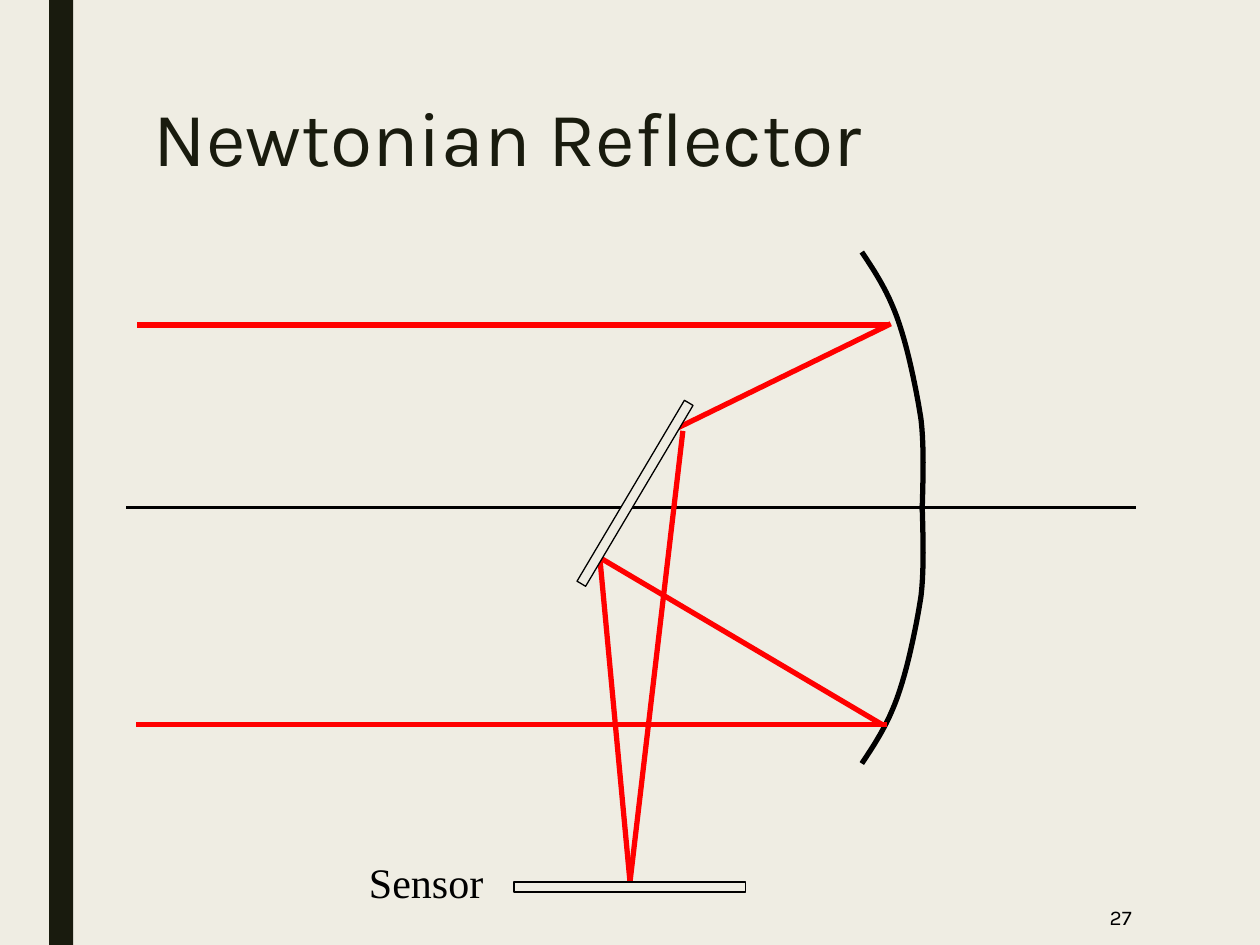
"""Build a slide with the light path of a Newtonian reflector."""
import dataclasses
import typing

import lxml.etree
import pptx
import pptx.dml.color
import pptx.enum.shapes
import pptx.enum.text
import pptx.oxml.ns
import pptx.util

Inches = pptx.util.Inches
Align = pptx.enum.text.PP_ALIGN
Anchor = pptx.enum.text.MSO_ANCHOR
Point = typing.Tuple[float, float]


@dataclasses.dataclass(frozen=True)
class Theme:
    paper: str = "EFEDE3"
    dark: str = "191B0E"
    ink: str = "000000"
    red: str = "FF0000"
    sans: str = "Karla"
    serif: str = "Times New Roman"
    title: float = 44
    label: float = 24
    small: float = 12
    thick: float = 3
    thin: float = 1.5
    hair: float = 0.75


@dataclasses.dataclass(frozen=True)
class Ray:
    start: Point
    end: Point
    color: str
    width: float


@dataclasses.dataclass(frozen=True)
class Plate:
    left: float
    top: float
    width: float
    height: float
    fill: str
    line: str = ""
    turn: float = 0


@dataclasses.dataclass(frozen=True)
class Label:
    text: str
    left: float
    top: float
    width: float
    height: float
    font: str
    size: float
    color: str
    align: Align = Align.LEFT
    anchor: Anchor = Anchor.TOP
    wrap: bool = True
    space: float = 1.0


THEME = Theme()
RED = (THEME.red, THEME.thick)
BACK = [
    Ray((1, 4.03), (9.02, 4.03), THEME.ink, THEME.thin),
    Ray((1.09, 2.58), (7.05, 2.58), *RED),
    Ray((5.33, 3.42), (7.07, 2.57), *RED),
]
FRONT = [
    Ray((1.08, 5.75), (7.04, 5.75), *RED),
    Ray((4.75, 4.42), (7, 5.75), *RED),
]
FOCUS = (5, 7)
FOLDS = [Ray(FOCUS, end, *RED) for end in ((5.42, 3.42), (4.76, 4.42))]
BAR = Plate(0.39, 0, 0.19, 7.5, THEME.dark)
FLAT = Plate(5, 3.08, 0.08, 1.67, THEME.paper, THEME.ink, 30.7)
SENSOR = Plate(4.08, 7, 1.84, 0.08, THEME.paper, THEME.ink)
CURVE = [
    (6.84, 2), (6.94, 2.15), (7.04, 2.3), (7.12, 2.52), (7.2, 2.74),
    (7.27, 3.07), (7.31, 3.33), (7.34, 3.58), (7.32, 3.93), (7.32, 4.05),
]
AXIS = 4.03
STEPS = 12
LABELS = [
    Label("Newtonian Reflector", 1.12, 0.75, 7.88, 1.62, THEME.sans,
          THEME.title, THEME.dark, space=0.89),
    Label("Sensor", 2.83, 6.75, 1.11, 0.5, THEME.serif, THEME.label,
          THEME.ink, wrap=False),
    Label("27", 7.77, 7.06, 1.31, 0.44, THEME.sans, THEME.small, THEME.ink,
          Align.RIGHT, Anchor.MIDDLE),
]


def tint(code: str) -> pptx.dml.color.RGBColor:
    """Turn a hex code into a colour."""
    return pptx.dml.color.RGBColor.from_string(code)


def stroke(line, color: str, width: float) -> None:
    """Set the colour and width of a line."""
    line.color.rgb = tint(color)
    line.width = pptx.util.Pt(width)


def draw_ray(slide, ray: Ray):
    """Draw a straight line without a shadow."""
    ends = [Inches(val) for val in ray.start + ray.end]
    line = slide.shapes.add_connector(
        pptx.enum.shapes.MSO_CONNECTOR.STRAIGHT, *ends)
    stroke(line.line, ray.color, ray.width)
    lxml.etree.SubElement(
        line._element.spPr, pptx.oxml.ns.qn("a:effectLst"))
    return line


def draw_plate(slide, plate: Plate):
    """Draw a filled bar, turned if need be."""
    shape = slide.shapes.add_shape(
        pptx.enum.shapes.MSO_SHAPE.RECTANGLE, Inches(plate.left),
        Inches(plate.top), Inches(plate.width), Inches(plate.height))
    shape.shadow.inherit = False
    shape.rotation = plate.turn
    shape.fill.solid()
    shape.fill.fore_color.rgb = tint(plate.fill)
    if plate.line:
        stroke(shape.line, plate.line, THEME.hair)
    else:
        shape.line.fill.background()
    return shape


def bend(knots: typing.List[Point]) -> typing.List[Point]:
    """Sample a chain of cubic curves."""
    spots = [knots[0]]
    for first in range(0, len(knots) - 1, 3):
        part = knots[first:first + 4]
        for step in range(1, STEPS + 1):
            t = step / STEPS
            u = 1 - t
            mix = (u ** 3, 3 * u * u * t, 3 * u * t * t, t ** 3)
            spots.append(tuple(
                sum(m * knot[dim] for m, knot in zip(mix, part))
                for dim in (0, 1)))
    return spots


def draw_curve(slide, knots: typing.List[Point]) -> None:
    """Draw one half of the curved mirror."""
    spots = [(Inches(x), Inches(y)) for x, y in bend(knots)]
    path = slide.shapes.build_freeform(*spots[0])
    path.add_line_segments(spots[1:], close=False)
    shape = path.convert_to_shape()
    shape.shadow.inherit = False
    shape.fill.background()
    stroke(shape.line, THEME.ink, THEME.thick)


def draw_label(slide, label: Label) -> None:
    """Write one line of text."""
    box = slide.shapes.add_textbox(
        Inches(label.left), Inches(label.top),
        Inches(label.width), Inches(label.height))
    frame = box.text_frame
    frame.text = label.text
    frame.word_wrap = label.wrap
    frame.vertical_anchor = label.anchor
    para = frame.paragraphs[0]
    para.alignment = label.align
    para.line_spacing = label.space
    font = para.runs[0].font
    font.name = label.font
    font.size = pptx.util.Pt(label.size)
    font.color.rgb = tint(label.color)


def main() -> None:
    """Build and save the slide."""
    deck = pptx.Presentation()
    deck.slide_width, deck.slide_height = Inches(10), Inches(7.5)
    slide = deck.slides.add_slide(deck.slide_layouts[6])
    slide.background.fill.solid()
    slide.background.fill.fore_color.rgb = tint(THEME.paper)
    draw_plate(slide, BAR)
    for ray in BACK:
        draw_ray(slide, ray)
    draw_curve(slide, CURVE)
    draw_curve(slide, [(x, 2 * AXIS - y) for x, y in CURVE])
    for ray in FRONT:
        draw_ray(slide, ray)
    folds = [draw_ray(slide, ray) for ray in FOLDS]
    draw_plate(slide, FLAT)
    sensor = draw_plate(slide, SENSOR)
    for fold in folds:
        fold.begin_connect(sensor, 0)
    for label in LABELS:
        draw_label(slide, label)
    deck.save("out.pptx")


if __name__ == "__main__":
    main()
